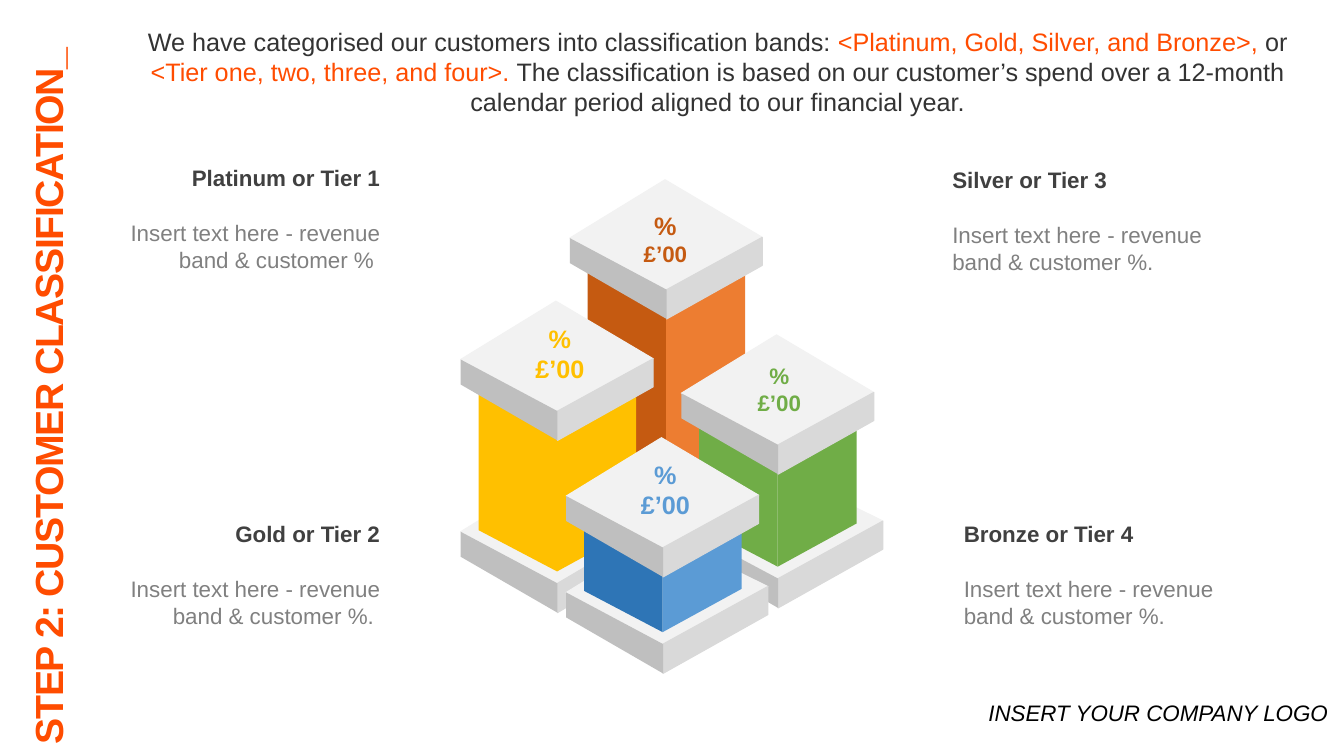
from pptx import Presentation
from pptx.dml.color import RGBColor
from pptx.enum.text import MSO_ANCHOR as Anchor, MSO_AUTO_SIZE as Fit, PP_ALIGN as Align
from pptx.util import Cm, Pt

ORANGE, INK, HEAD, GREY = "FF4C00", "333333", "404040", "808080"
TOP, RIGHT, LEFT = "F2F2F2", "D9D9D9", "BFBFBF"


def rgb(code):
    return RGBColor.from_string(code)


def text(slide, box, paras, align=Align.LEFT, wrap=True, anchor=Anchor.TOP):
    """Each paragraph is a list of runs: (words, size, colour, bold, italic)."""
    shape = slide.shapes.add_textbox(*[Cm(n) for n in box])
    frame = shape.text_frame
    frame.word_wrap = wrap
    frame.auto_size = Fit.SHAPE_TO_FIT_TEXT
    frame.vertical_anchor = anchor
    for i, runs in enumerate(paras):
        para = frame.paragraphs[0] if i == 0 else frame.add_paragraph()
        para.alignment = align
        for words, size, color, bold, italic in runs:
            run = para.add_run()
            run.text = words
            font = run.font
            font.name, font.size = "Arial", Pt(size)
            font.bold, font.italic = bold, italic
            font.color.rgb = rgb(color)
    return shape


def face(slide, x, y, points, color, edge=False):
    """Filled outline whose points are offsets from (x, y)."""
    spots = [(Cm(x + dx), Cm(y + dy)) for dx, dy in points]
    form = slide.shapes.build_freeform(*spots[0], scale=1.0)
    form.add_line_segments(spots[1:], close=True)
    shape = form.convert_to_shape()
    shape.shadow.inherit = False
    shape.fill.solid()
    shape.fill.fore_color.rgb = rgb(color)
    if edge:
        shape.line.color.rgb = rgb(color)
        shape.line.width = 0
    else:
        shape.line.fill.background()


def slab(slide, x, y, reach=2.41, rise=1.32):
    """Grey plate whose upper front corner is (x, y)."""
    west, east, front = (-2.44, -1.3), (reach, -rise), (0, 0)
    face(slide, x, y, [(-0.04, -2.77), east, front, west], TOP, True)
    face(slide, x, y, [east, (reach, 0.71 - rise), (0, 0.74), front], RIGHT, True)
    face(slide, x, y, [west, front, (0, 0.74), (-2.44, -0.67)], LEFT)


def tower(slide, x, y, drop, dark, light, ink, sizes, shift, reach=None):
    """Column with a cap at (x, y), ending drop below it, on a base if reach is set.

    The label is centred at shift from (x, y).
    """
    if reach:
        slab(slide, x, y + drop + 0.3, reach, 1.45)
    for side, slope, color in ((-1.98, 1.04, dark), (1.99, 1.09, light)):
        face(slide, x - 0.01, y, [(side, 0.36 - slope), (0, 0.36),
                                  (0, drop), (side, drop - slope)], color)
    slab(slide, x, y)
    dx, dy = shift
    wide, high = 2.2, 1.8
    box = (x + dx - wide / 2, y + dy - high / 2, wide, high)
    paras = [[(words, size, ink, True, False)]
             for words, size in zip(("%", "£’00"), sizes)]
    text(slide, box, paras, Align.CENTER, False, Anchor.MIDDLE)


def note(slide, x, y, name, body, align):
    text(slide, (x, y, 7.77, 0.94), [[(name, 16, HEAD, True, False)]], align)
    text(slide, (x, y + 1.39, 7.77, 1.63), [[(body, 16, GREY, False, False)]], align)


def header(slide):
    title = text(slide, (-7.9, 9.17, 18.21, 1.45),
                 [[("STEP 2: CUSTOMER CLASSIFICATION_", 28, ORANGE, True, False)]],
                 Align.JUSTIFY, False)
    title.rotation = 270
    title.text_frame.paragraphs[0].runs[0].font._element.set("spc", "-100")
    parts = [
        ("We have categorised our customers into classification bands: ", INK),
        ("<Platinum, Gold, Silver, and Bronze>, ", ORANGE),
        ("or ", INK),
        ("<Tier one, two, three, and four>. ", ORANGE),
        ("The classification is based on our customer’s spend over a 12-month "
         "calendar period aligned to our financial year.", INK),
    ]
    text(slide, (3.2, 0.53, 29.77, 2.57),
         [[(words, 18, color, False, False) for words, color in parts]], Align.CENTER)


def main():
    deck = Presentation()
    deck.slide_width, deck.slide_height = Cm(33.87), Cm(19.05)
    slide = deck.slides.add_slide(deck.slide_layouts[6])
    text(slide, (24.66, 17.5, 9.17, 0.94),
         [[("INSERT YOUR COMPANY LOGO", 16, "000000", False, True)]], wrap=False)
    header(slide)
    body = "Insert text here - revenue band & customer %"
    for x, y, name, tail, align in (
            (23.75, 4.07, "Silver or Tier 3", ".", Align.LEFT),
            (24.04, 12.98, "Bronze or Tier 4", ".", Align.LEFT),
            (2.06, 4.01, "Platinum or Tier 1", " ", Align.RIGHT),
            (2.06, 12.98, "Gold or Tier 2", ". ", Align.RIGHT)):
        note(slide, x, y, name, body + tail, align)
    rust, green, gold, blue = "C55A11", "70AD47", "FFC000", "5B9BD5"
    for spot in (
            (16.8, 7.3, 6.38, rust, "ED7D31", rust, (18, 16), (-0.03, -1.28)),
            (19.61, 11.21, 3.07, green, green, green, (16, 16), (0.03, -1.4), 2.64),
            (14.05, 10.36, 4.04, gold, gold, gold, (18, 18), (0.06, -1.46), 2.46),
            (16.71, 13.8, 2.13, "2E75B6", blue, blue, (18, 18), (0.06, -1.46), 2.64)):
        tower(slide, *spot)
    deck.save("out.pptx")


if __name__ == "__main__":
    main()
